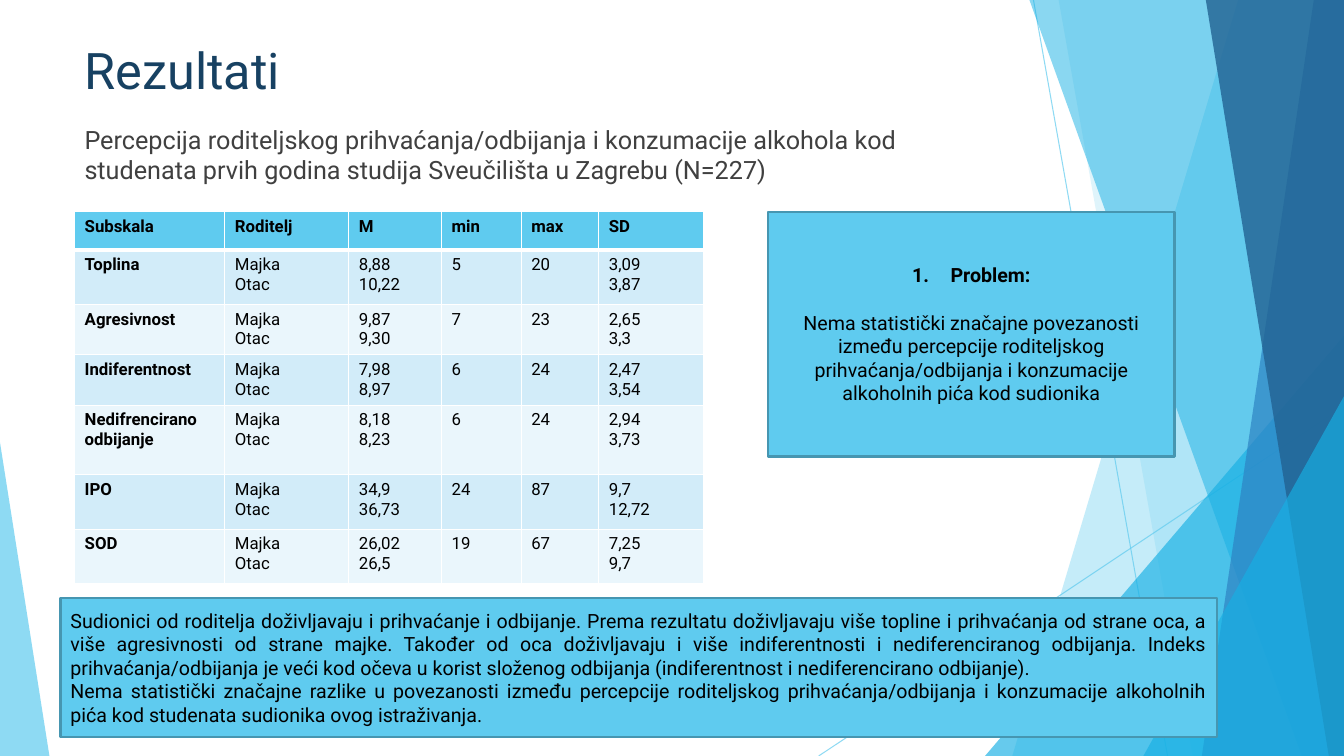
from lxml import etree
from pptx import Presentation
from pptx.dml.color import RGBColor
from pptx.enum import shapes, text
from pptx.oxml import ns
from pptx.util import Inches, Pt

FONT = "Roboto"
COLORS = {
    "sky": "5FCBEF", "cyan": "17B0E4", "blue": "2E83C3", "navy": "226292",
    "title": "174162", "body": "404040", "black": "000000", "white": "FFFFFF",
    "outline": "4696B1", "band_dark": "D2ECF9", "band_light": "EAF6FC",
}
SLIDE_WIDTH, SLIDE_HEIGHT = 13.33, 7.5
COLUMN_WIDTHS = [1.49, 1.23, 0.92, 0.79, 0.77, 1.04]
ROW_HEIGHTS = [0.38, 0.54, 0.49, 0.49, 0.69, 0.54, 0.54]
PARENTS = "Majka\nOtac"
TABLE_ROWS = [
    ["Subskala", "Roditelj", "M", "min", "max", "SD"],
    ["Toplina", PARENTS, "8,88\n10,22", "5", "20", "3,09\n3,87"],
    ["Agresivnost", PARENTS, "9,87\n9,30", "7", "23", "2,65\n3,3"],
    ["Indiferentnost", PARENTS, "7,98\n8,97", "6", "24", "2,47\n3,54"],
    ["Nedifrencirano odbijanje", PARENTS, "8,18\n8,23", "6", "24", "2,94\n3,73"],
    ["IPO", PARENTS, "34,9\n36,73", "24", "87", "9,7\n12,72"],
    ["SOD", PARENTS, "26,02\n26,5", "19", "67", "7,25\n9,7"],
]
SUBTITLE = ("Percepcija roditeljskog prihvaćanja/odbijanja i konzumacije alkohola kod "
            "studenata prvih godina studija Sveučilišta u Zagrebu (N=227)")
PROBLEM = ("Nema statistički značajne povezanosti između percepcije roditeljskog "
           "prihvaćanja/odbijanja i konzumacije alkoholnih pića kod sudionika")
CONCLUSIONS = [
    "Sudionici od roditelja doživljavaju i prihvaćanje i odbijanje. Prema rezultatu "
    "doživljavaju više topline i prihvaćanja od strane oca, a više agresivnosti od strane "
    "majke. Također od oca doživljavaju i više indiferentnosti i nediferenciranog odbijanja. "
    "Indeks prihvaćanja/odbijanja je veći kod očeva u korist složenog odbijanja "
    "(indiferentnost i nediferencirano odbijanje).",
    "Nema statistički značajne razlike u povezanosti između percepcije roditeljskog "
    "prihvaćanja/odbijanja i konzumacije alkoholnih pića kod studenata sudionika ovog "
    "istraživanja.",
]


def rgb(name):
    return RGBColor.from_string(COLORS[name])


def set_alpha(element, percent):
    for color in element.iter(ns.qn("a:srgbClr")):
        etree.SubElement(color, ns.qn("a:alpha"), val=str(percent * 1000))


def write(frame, lines, size, color, align=text.PP_ALIGN.LEFT, bold=False):
    """Fill a text frame with one paragraph per line, all formatted alike."""
    frame.word_wrap = True
    frame.text = "\n".join(lines)
    for paragraph in frame.paragraphs:
        paragraph.alignment = align
        font = paragraph.font
        font.name, font.size, font.bold = FONT, Pt(size), bold
        font.color.rgb = rgb(color)


def paint_facet(shape, color, alpha):
    shape.shadow.inherit = False
    shape.fill.solid()
    shape.fill.fore_color.rgb = rgb(color)
    set_alpha(shape.fill._xPr, alpha)
    shape.line.fill.background()


def add_facet(slide, top_left, bottom_left, color, alpha):
    """Add a translucent facet that reaches the right edge of the slide."""
    corners = [(SLIDE_WIDTH, 0), (SLIDE_WIDTH, SLIDE_HEIGHT), (bottom_left, SLIDE_HEIGHT)]
    builder = slide.shapes.build_freeform(Inches(top_left), 0)
    builder.add_line_segments([(Inches(x), Inches(y)) for x, y in corners])
    paint_facet(builder.convert_to_shape(), color, alpha)


def add_triangle(slide, left, top, width, apex, color, alpha):
    """Add a translucent triangle that stands on the bottom edge."""
    triangle = slide.shapes.add_shape(
        shapes.MSO_SHAPE.ISOSCELES_TRIANGLE, Inches(left), Inches(top),
        Inches(width), Inches(SLIDE_HEIGHT - top))
    triangle.adjustments[0] = apex
    paint_facet(triangle, color, alpha)


def add_thin_line(slide, *ends):
    line = slide.shapes.add_connector(
        shapes.MSO_CONNECTOR.STRAIGHT, *[Inches(value) for value in ends])
    line.line.width = Pt(0.75)
    line.line.color.rgb = rgb("sky")
    properties = line._element.spPr
    set_alpha(properties, 70)
    etree.SubElement(properties, ns.qn("a:effectLst"))


def add_decoration(slide):
    add_thin_line(slide, 10.25, 0, 11.58, SLIDE_HEIGHT)
    add_thin_line(slide, SLIDE_WIDTH, 4.03, 8.12, SLIDE_HEIGHT)
    add_facet(slide, 12.28, 10.04, "sky", 36)
    add_facet(slide, 10.5, 11.83, "sky", 20)
    add_triangle(slide, 9.77, 3.33, 3.56, 1, "cyan", 66)
    add_facet(slide, 10.21, 12.91, "cyan", 50)
    add_facet(slide, 13.03, 11.92, "blue", 70)
    add_facet(slide, 11.96, 13.18, "navy", 80)
    add_triangle(slide, 11.34, 3.93, 1.99, 1, "cyan", 66)
    add_triangle(slide, 0, 4.39, 0.49, 0, "sky", 70)


def set_borders(cell, bottom_width):
    properties = cell._tc.get_or_add_tcPr()
    widths = {"lnL": 1, "lnR": 1, "lnT": 1, "lnB": bottom_width}
    for position, (side, width) in enumerate(widths.items()):
        border = etree.Element(ns.qn("a:" + side), w=str(Pt(width)))
        fill = etree.SubElement(border, ns.qn("a:solidFill"))
        etree.SubElement(fill, ns.qn("a:srgbClr"), val=COLORS["white"])
        properties.insert(position, border)


def add_results_table(slide):
    table = slide.shapes.add_table(
        len(TABLE_ROWS), len(COLUMN_WIDTHS), Inches(0.74), Inches(2.1),
        Inches(sum(COLUMN_WIDTHS)), Inches(sum(ROW_HEIGHTS))).table
    for column, width in zip(table.columns, COLUMN_WIDTHS):
        column.width = Inches(width)
    for row, height in zip(table.rows, ROW_HEIGHTS):
        row.height = Inches(height)
    for r, values in enumerate(TABLE_ROWS):
        band = "sky" if r == 0 else "band_dark" if r % 2 else "band_light"
        for c, value in enumerate(values):
            cell = table.cell(r, c)
            cell.fill.solid()
            cell.fill.fore_color.rgb = rgb(band)
            set_borders(cell, 3 if r == 0 else 1)
            write(cell.text_frame, value.split("\n"), 12, "black", bold=r == 0 or c == 0)


def add_panel(slide, left, top, width, height, lines, align):
    panel = slide.shapes.add_shape(
        shapes.MSO_SHAPE.RECTANGLE, Inches(left), Inches(top), Inches(width), Inches(height))
    panel.shadow.inherit = False
    panel.fill.solid()
    panel.fill.fore_color.rgb = rgb("sky")
    panel.line.color.rgb = rgb("outline")
    panel.line.width = Pt(1.5)
    panel.text_frame.vertical_anchor = text.MSO_ANCHOR.MIDDLE
    write(panel.text_frame, lines, 14, "black", align)
    return panel


def number_heading(paragraph):
    paragraph.font.bold = True
    paragraph.space_after = Pt(17)
    properties = paragraph._p.get_or_add_pPr()
    properties.set("marL", str(Inches(0.38)))
    properties.set("indent", str(-Inches(0.38)))
    numbering = etree.Element(ns.qn("a:buAutoNum"), type="arabicPeriod")
    properties.find(ns.qn("a:defRPr")).addprevious(numbering)


def add_heading(slide):
    title = slide.shapes.title
    title.left, title.top = Inches(0.74), Inches(0.29)
    title.width, title.height = Inches(9.4), Inches(0.79)
    title.text_frame.vertical_anchor = text.MSO_ANCHOR.MIDDLE
    write(title.text_frame, ["Rezultati"], 36, "title")
    subtitle = slide.shapes.add_textbox(Inches(0.74), Inches(1.18), Inches(9.4), Inches(0.8))
    write(subtitle.text_frame, [SUBTITLE], 18, "body")


def main():
    presentation = Presentation()
    presentation.slide_width = Inches(SLIDE_WIDTH)
    presentation.slide_height = Inches(SLIDE_HEIGHT)
    slide = presentation.slides.add_slide(presentation.slide_layouts.get_by_name("Title Only"))
    add_decoration(slide)
    add_heading(slide)
    add_results_table(slide)
    add_panel(slide, 0.6, 5.93, 11.47, 1.38, CONCLUSIONS, text.PP_ALIGN.JUSTIFY)
    problem = add_panel(slide, 7.62, 2.1, 4.03, 2.43, ["Problem:", PROBLEM],
                        text.PP_ALIGN.CENTER)
    number_heading(problem.text_frame.paragraphs[0])
    presentation.save("out.pptx")


if __name__ == "__main__":
    main()
